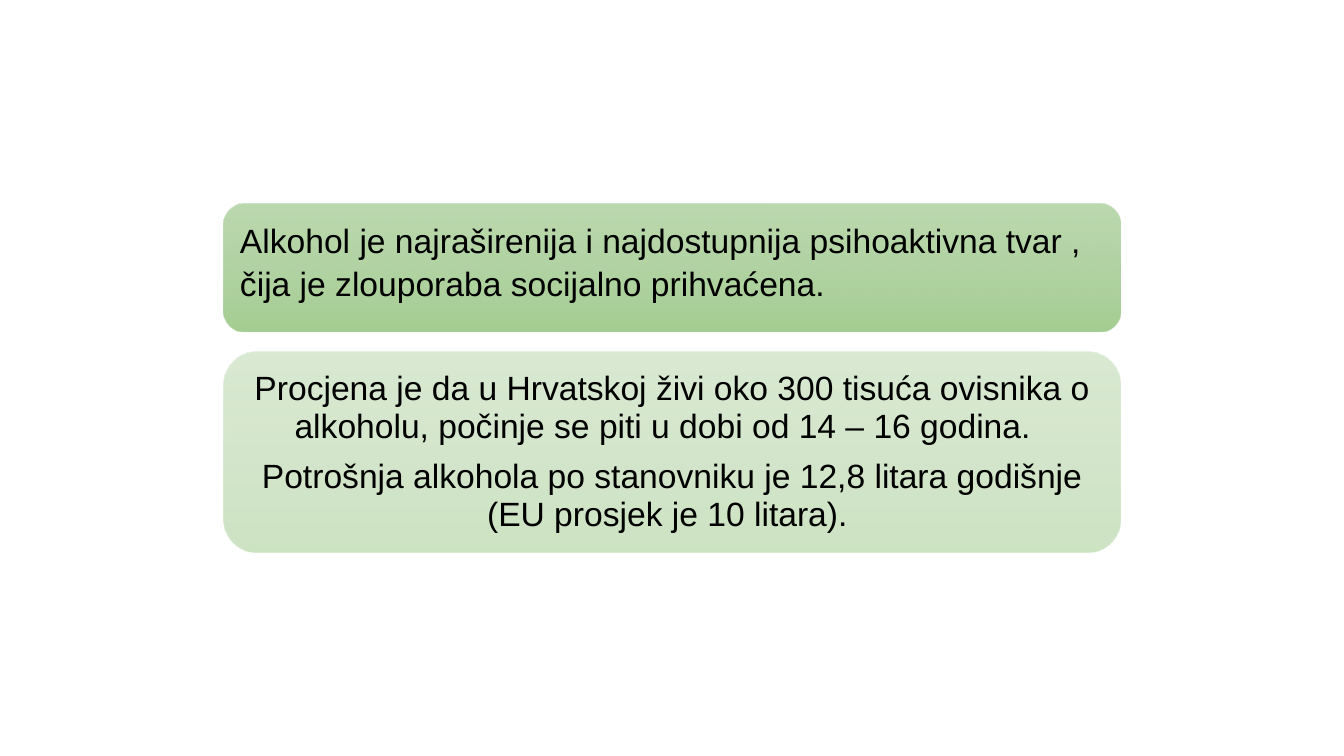
from lxml import etree
from pptx import Presentation
from pptx.dml.color import RGBColor
from pptx.enum.shapes import MSO_SHAPE
from pptx.enum.text import MSO_ANCHOR, PP_ALIGN
from pptx.oxml.ns import qn
from pptx.util import Inches, Pt

ROUNDED = MSO_SHAPE.ROUNDED_RECTANGLE
TOP, MIDDLE = MSO_ANCHOR.TOP, MSO_ANCHOR.MIDDLE
LEFT, CENTER = PP_ALIGN.LEFT, PP_ALIGN.CENTER

BLACK = RGBColor(0x00, 0x00, 0x00)
GREENS = (
    (0, RGBColor(0xB5, 0xD5, 0xA7)),
    (50, RGBColor(0xAA, 0xCE, 0x9A)),
    (100, RGBColor(0x9C, 0xC9, 0x87)),
)

PANEL_LEFT, PANEL_WIDTH = 2.22, 8.89
FIRST_TOP, GAP = 2.02, 0.2

ALCOHOL = ["Alkohol je najraširenija i najdostupnija psihoaktivna tvar , "
           "čija je zlouporaba socijalno prihvaćena."]
ESTIMATES = [
    "Procjena je da u Hrvatskoj živi oko 300 tisuća ovisnika o alkoholu, "
    "počinje se piti u dobi od 14 – 16 godina.  ",
    "Potrošnja alkohola po stanovniku je 12,8 litara godišnje "
    "(EU prosjek je 10 litara). ",
]


def fill_green(sp, opacity):
    """Fill with the vertical three-stop green gradient at a percent opacity."""
    sp.fill.gradient()
    sp.fill.gradient_angle = 270
    stops = sp._element.spPr.find(qn("a:gradFill")).find(qn("a:gsLst"))
    for stop in list(stops):
        stops.remove(stop)
    for position, color in GREENS:
        stop = etree.SubElement(stops, qn("a:gs"), pos=str(position * 1000))
        rgb = etree.SubElement(stop, qn("a:srgbClr"), val=str(color))
        etree.SubElement(rgb, qn("a:alpha"), val=str(opacity * 1000))


def add_panel(slide, top, height, opacity, texts, anchor, align, spacing, inset):
    sp = slide.shapes.add_shape(ROUNDED, Inches(PANEL_LEFT), Inches(top),
                                Inches(PANEL_WIDTH), Inches(height))
    sp.shadow.inherit = False
    sp.line.fill.background()
    fill_green(sp, opacity)

    tf = sp.text_frame
    tf.word_wrap = True
    tf.vertical_anchor = anchor
    tf.margin_left = tf.margin_right = Inches(inset)
    tf.margin_top = tf.margin_bottom = Inches(0.08)
    for i, text in enumerate(texts):
        p = tf.paragraphs[0] if i == 0 else tf.add_paragraph()
        p.text = text
        p.alignment = align
        p.line_spacing = spacing
        p.space_after = Pt(8.4 if i < len(texts) - 1 else 0)
        p.font.name = "Arial"
        p.font.size = Pt(24)
        p.font.color.rgb = BLACK


def main():
    prs = Presentation()
    prs.slide_width, prs.slide_height = Inches(13.33), Inches(7.5)
    slide = prs.slides.add_slide(prs.slide_layouts[6])

    first_height = 1.27
    add_panel(slide, FIRST_TOP, first_height, 90, ALCOHOL,
              TOP, LEFT, 1.06, 0.1)
    add_panel(slide, FIRST_TOP + first_height + GAP, 1.99, 50, ESTIMATES,
              MIDDLE, CENTER, 0.95, 0.1)
    prs.save("out.pptx")


if __name__ == "__main__":
    main()
